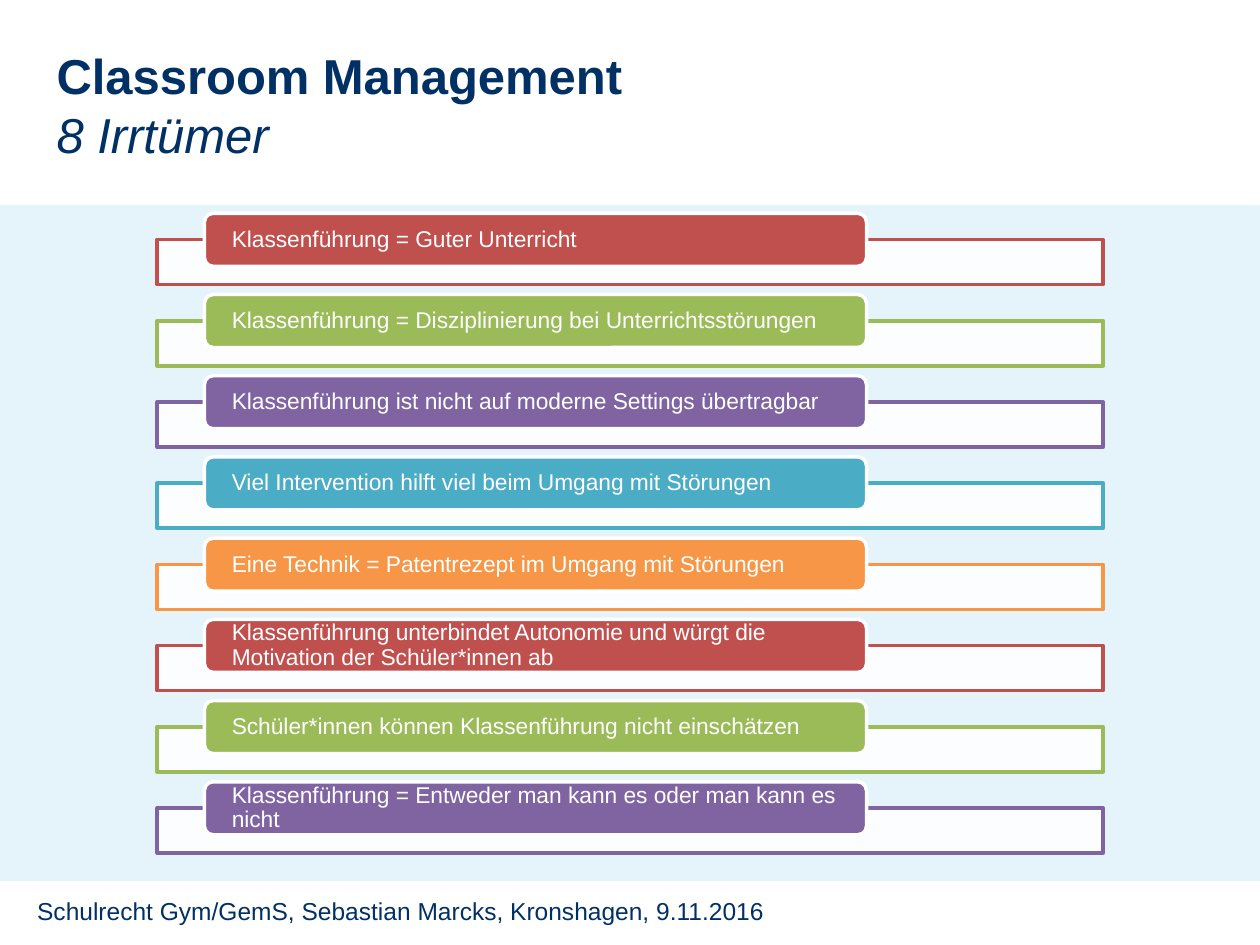
from dataclasses import dataclass

from lxml import etree
from pptx import Presentation
from pptx.dml.color import RGBColor
from pptx.enum.shapes import MSO_SHAPE
from pptx.enum.text import MSO_ANCHOR, MSO_AUTO_SIZE, PP_ALIGN
from pptx.oxml.ns import qn
from pptx.util import Cm, Pt

RECT = MSO_SHAPE.RECTANGLE
ROUND = MSO_SHAPE.ROUNDED_RECTANGLE
MIDDLE = MSO_ANCHOR.MIDDLE
LEFT = PP_ALIGN.LEFT
GROW = MSO_AUTO_SIZE.SHAPE_TO_FIT_TEXT


@dataclass(frozen=True)
class Theme:
    font: str = "Arial"
    navy: str = "003064"
    blue: str = "008CCF"
    white: str = "FFFFFF"
    hues: tuple = ("C0504D", "9BBB59", "8064A2", "4BACC6", "F79646")
    head: int = 28
    foot: int = 14
    label: int = 13
    line: int = 2


THEME = Theme()

ERRORS = (
    "Klassenführung = Guter Unterricht",
    "Klassenführung = Disziplinierung bei Unterrichtsstörungen",
    "Klassenführung ist nicht auf moderne Settings übertragbar",
    "Viel Intervention hilft viel beim Umgang mit Störungen",
    "Eine Technik = Patentrezept im Umgang mit Störungen",
    "Klassenführung unterbindet Autonomie und würgt die Motivation der Schüler*innen ab",
    "Schüler*innen können Klassenführung nicht einschätzen",
    "Klassenführung = Entweder man kann es oder man kann es nicht",
)


def put(item, **values):
    for name, value in values.items():
        setattr(item, name, value)


def style(para, size, color, **values):
    put(para.font, name=THEME.font, size=Pt(size), **values)
    para.font.color.rgb = RGBColor.from_string(color)


def block(slide, kind, box, fill, line=None, alpha=100):
    shape = slide.shapes.add_shape(kind, *map(Cm, box))
    shape.shadow.inherit = False
    shape.fill.solid()
    shape.fill.fore_color.rgb = RGBColor.from_string(fill)
    if alpha < 100:
        tint = shape.fill._xPr.find(qn("a:solidFill"))[0]
        etree.SubElement(tint, qn("a:alpha"), val=str(alpha * 1000))
    if line:
        shape.line.color.rgb = RGBColor.from_string(line)
        shape.line.width = Pt(THEME.line)
    else:
        shape.line.fill.background()
    return shape


def title(slide, box):
    frame = slide.shapes.add_textbox(*map(Cm, box)).text_frame
    put(frame, word_wrap=True, auto_size=GROW)
    frame.text = "Classroom Management\n8 Irrtümer"
    for para, look in zip(frame.paragraphs, ({"bold": True}, {"italic": True})):
        style(para, THEME.head, THEME.navy, **look)


def footer(slide, box):
    frame = slide.shapes.add_textbox(*map(Cm, box)).text_frame
    frame.word_wrap = True
    frame.text = "Schulrecht Gym/GemS, Sebastian Marcks, Kronshagen, 9.11.2016"
    style(frame.paragraphs[0], THEME.foot, THEME.navy)


def row(slide, box, text, hue):
    left, top, width, high = box
    # Open bar behind, its label tab overlapping the upper edge
    block(slide, RECT, (left, top + 0.53, width, high - 0.53),
          THEME.white, hue, alpha=90)
    tab = block(slide, ROUND, (left + 0.95, top, width * 0.7, 1.07),
                hue, THEME.white)
    frame = tab.text_frame
    put(frame, word_wrap=True, vertical_anchor=MIDDLE, margin_left=Cm(0.5),
        margin_right=Cm(0.5), margin_top=0, margin_bottom=0)
    frame.text = text
    para = frame.paragraphs[0]
    put(para, alignment=LEFT, line_spacing=0.9)
    style(para, THEME.label, THEME.white)


def rows(slide, box):
    left, top, width, height = box
    high = 1.44
    step = (height - high) / (len(ERRORS) - 1)
    for i, text in enumerate(ERRORS):
        hue = THEME.hues[i % len(THEME.hues)]
        row(slide, (left, top + i * step, width, high), text, hue)


def main():
    deck = Presentation()
    put(deck, slide_width=Cm(25.4), slide_height=Cm(19.05))
    slide = deck.slides.add_slide(deck.slide_layouts[6])
    # Pale band behind the list
    block(slide, RECT, (0, 4.13, 25.4, 13.63), THEME.blue, alpha=10)
    footer(slide, (0.5, 17.93, 21.8, 1.32))
    title(slide, (0.89, 0.79, 13.6, 2.64))
    rows(slide, (3.17, 4.3, 19.07, 12.9))
    deck.save("out.pptx")


if __name__ == "__main__":
    main()
